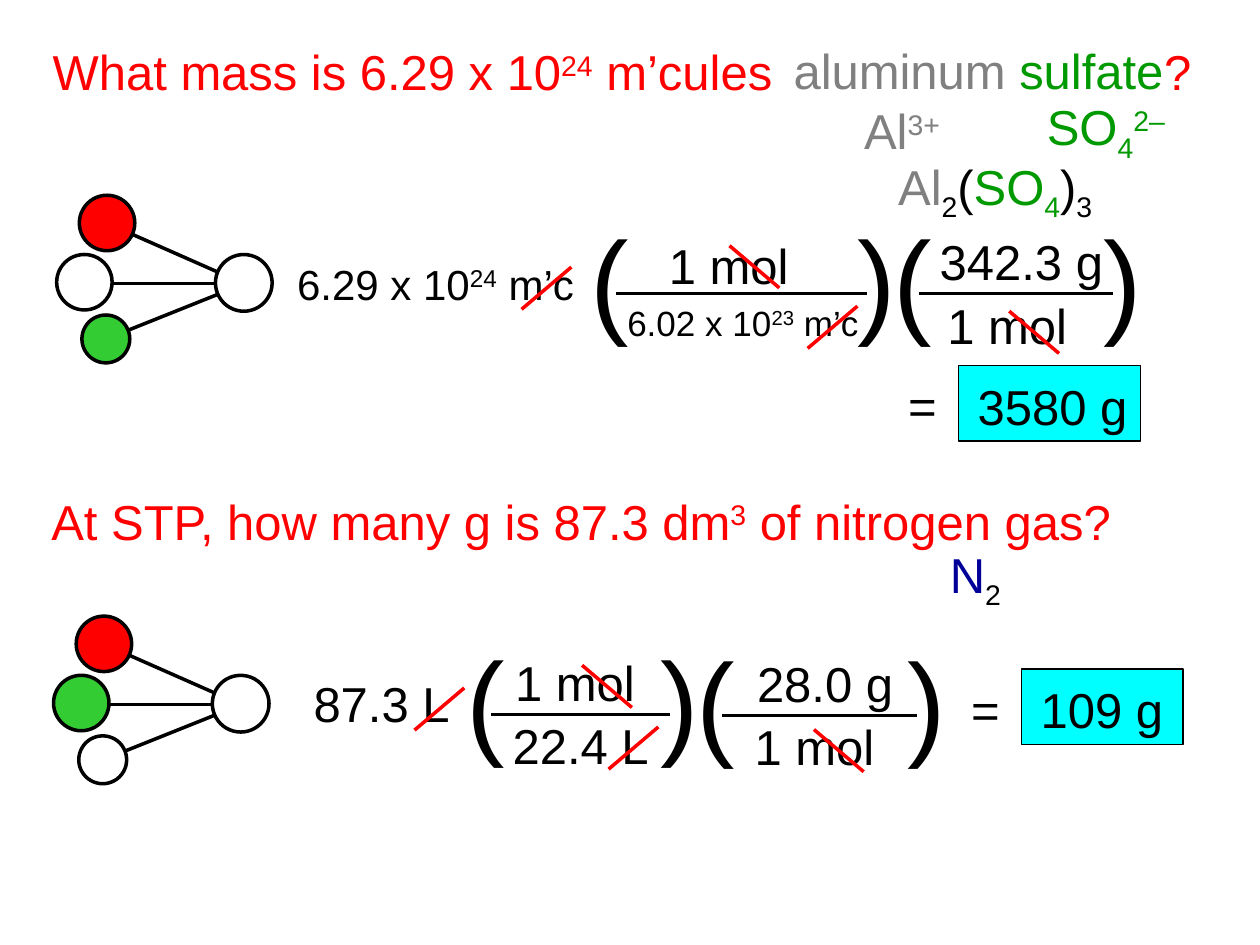
from dataclasses import dataclass

from lxml import etree
from pptx import Presentation
from pptx import util as u
from pptx.dml.color import RGBColor
from pptx.enum import shapes, text
from pptx.oxml import ns


@dataclass(frozen=True)
class Theme:
    font: str = "Arial"
    black: str = "000000"
    red: str = "FF0000"
    green: str = "33CC33"
    aluminum: str = "808080"
    sulfate: str = "009900"
    nitrogen: str = "000099"
    answer: str = "00FFFF"
    body: int = 28
    given: int = 24
    small: int = 20
    bracket: int = 66
    thin: float = 0.75
    bar: float = 1.75
    stroke: float = 2
    superscript: int = 30000
    subscript: int = -25000


THEME = Theme()
COLUMNS, ROWS = 100, 75  # square cells across a 10 x 7.5 inch slide
CELL = u.Inches(10) // COLUMNS
LINE_HEIGHT = 5.7  # rows taken by one line of body text


def cells(count):
    return u.Emu(round(count * CELL))


def rgb(colour):
    return RGBColor.from_string(colour)


# Text: each run is (wording, colour, baseline shift)
def plain(wording, colour=THEME.black):
    return wording, colour, 0


def sup(wording, colour=THEME.black):
    return wording, colour, THEME.superscript


def sub(wording, colour=THEME.black):
    return wording, colour, THEME.subscript


def write_runs(paragraph, runs, size):
    for wording, colour, shift in runs:
        run = paragraph.add_run()
        run.text = wording
        run.font.name = THEME.font
        run.font.size = u.Pt(size)
        run.font.color.rgb = rgb(colour)
        if shift:
            run.font._element.set("baseline", str(shift))


def add_words(slide, col, row, width, runs, size=THEME.body, height=LINE_HEIGHT,
              anchor=text.MSO_ANCHOR.TOP, align=text.PP_ALIGN.LEFT):
    box = slide.shapes.add_textbox(*map(cells, (col, row, width, height)))
    frame = box.text_frame
    frame.word_wrap = True
    frame.auto_size = text.MSO_AUTO_SIZE.SHAPE_TO_FIT_TEXT
    frame.vertical_anchor = anchor
    frame.paragraphs[0].alignment = align
    write_runs(frame.paragraphs[0], runs, size)


def add_formula(slide, col, row, width, *runs):
    add_words(slide, col, row, width, runs, anchor=text.MSO_ANCHOR.MIDDLE)


# Lines and outlined shapes
def add_line(slide, start, end, colour=THEME.black, weight=THEME.stroke):
    line = slide.shapes.add_connector(
        shapes.MSO_CONNECTOR.STRAIGHT, *map(cells, (*start, *end)))
    line.line.color.rgb = rgb(colour)
    line.line.width = u.Pt(weight)
    etree.SubElement(line._element.spPr, ns.qn("a:effectLst"))


def add_outlined(slide, kind, col, row, width, height, fill, weight):
    shape = slide.shapes.add_shape(kind, *map(cells, (col, row, width, height)))
    shape.shadow.inherit = False
    if fill:
        shape.fill.solid()
        shape.fill.fore_color.rgb = rgb(fill)
    else:
        shape.fill.background()
    shape.line.color.rgb = rgb(THEME.black)
    shape.line.width = u.Pt(weight)
    return shape


def add_strike(slide, col, row, rising=False):
    top, bottom = row, row + 3.35
    if rising:
        top, bottom = bottom, top
    add_line(slide, (col, top), (col + 3.95, bottom), THEME.red)


# Three quantities joined to the mole on the right
def add_mole_map(slide, col, row, fills):
    for start, end in (((5.7, 10.7), (12.7, 7.9)),
                       ((6, 3.1), (12.8, 6.1)),
                       ((4.3, 7), (12.6, 7))):
        add_line(slide, (col + start[0], row + start[1]),
                 (col + end[0], row + end[1]))
    nodes = ((1.8, 0, 4.4), (0, 4.7, 4.4), (2, 9.5, 3.8), (12.6, 4.7, 4.5))
    for (dx, dy, size), fill in zip(nodes, (*fills, None)):
        add_outlined(slide, shapes.MSO_SHAPE.OVAL, col + dx, row + dy,
                     size, size, fill, THEME.stroke)


# Bracketed conversion factor with its fraction bar
def add_factor(slide, left, right, row):
    for col, bracket in ((left, "("), (right, ")")):
        add_words(slide, col, row, 4.2, [plain(bracket)], THEME.bracket, 12,
                  align=text.PP_ALIGN.CENTER)
    add_line(slide, (left + 3, row + 7.3), (right + 1.75, row + 7.3),
             weight=THEME.bar)


def add_answer(slide, col, row, width, wording):
    add_words(slide, col - 5, row + 0.35, 4.5, [plain("=")])
    box = add_outlined(slide, shapes.MSO_SHAPE.RECTANGLE, col, row, width, 6,
                       THEME.answer, THEME.thin)
    frame = box.text_frame
    frame.word_wrap = False
    frame.vertical_anchor = text.MSO_ANCHOR.TOP
    frame.margin_left, frame.margin_top = cells(1.5), cells(0.85)
    frame.margin_right = 0
    frame.paragraphs[0].alignment = text.PP_ALIGN.LEFT
    write_runs(frame.paragraphs[0], [plain(wording)], THEME.body)


def add_mass_problem(slide):
    red, grey, green = THEME.red, THEME.aluminum, THEME.sulfate
    # Question and the compound's formula
    add_formula(slide, 3.2, 2.8, 60, plain("What mass is 6.29 x 10", red),
                sup("24", red), plain(" m’cules", red))
    add_formula(slide, 62, 2.7, 32.6, plain("aluminum ", grey),
                plain("sulfate", green))
    add_formula(slide, 91.4, 2.8, 5, plain("?", red))
    add_formula(slide, 67.6, 7.5, 8.5, plain("Al", grey), sup("3+", grey))
    add_formula(slide, 82.1, 7.5, 13.1, plain("SO", green), sub("4", green),
                sup("2–", green))
    add_formula(slide, 70.3, 12.2, 19.2, plain("Al", grey), sub("2"),
                plain("("), plain("SO", green), sub("4", green), plain(")"),
                sub("3"))

    # Molecules to moles to grams
    add_mole_map(slide, 4.5, 15.5, (red, None, THEME.green))
    add_words(slide, 22.6, 20, 25.3,
              [plain("6.29 x 10"), sup("24"), plain(" m’c")], THEME.given, 5)
    add_factor(slide, 45.9, 67.1, 16)
    add_words(slide, 52.1, 18.2, 11.9, [plain("1 mol")])
    add_words(slide, 48.8, 23.4, 21.2,
              [plain("6.02 x 10"), sup("23"), plain(" m’c")], THEME.small, 4.3)
    add_factor(slide, 69.9, 86.6, 16)
    add_words(slide, 73.6, 17.9, 15.9, [plain("342.3 g")])
    add_words(slide, 74.2, 23, 11.9, [plain("1 mol")])
    for col, row, rising in ((41.4, 21.2, True), (57.9, 19.5, False),
                             (64.1, 24.3, True), (80.1, 24.7, False)):
        add_strike(slide, col, row, rising)
    add_answer(slide, 76.1, 29, 14.4, "3580 g")


def add_gas_problem(slide):
    red = THEME.red
    # Question and the gas formula
    add_formula(slide, 3.1, 38.5, 90, plain("At STP, how many g is 87.3 dm", red),
                sup("3", red), plain(" of nitrogen gas?", red))
    add_formula(slide, 74.4, 43, 7.4, plain("N", THEME.nitrogen), sub("2"))

    # Volume to moles to grams
    add_mole_map(slide, 4.25, 48.9, (red, THEME.green, None))
    add_words(slide, 23.9, 53, 13.7, [plain("87.3 L")])
    add_factor(slide, 36, 51.4, 49.4)
    add_words(slide, 39.9, 51.3, 11.9, [plain("1 mol")])
    add_words(slide, 39.7, 56.3, 12.9, [plain("22.4 L")])
    add_factor(slide, 54.3, 71, 49.5)
    add_words(slide, 59.1, 51.4, 13.5, [plain("28.0 g")])
    add_words(slide, 58.9, 56.4, 11.9, [plain("1 mol")])
    for col, row, rising in ((32.9, 54.6, True), (46.2, 52.8, False),
                             (48.3, 57.7, True), (64.6, 57.9, False)):
        add_strike(slide, col, row, rising)
    add_answer(slide, 81.1, 53.1, 12.8, "109 g")


def main():
    deck = Presentation()
    deck.slide_width, deck.slide_height = cells(COLUMNS), cells(ROWS)
    slide = deck.slides.add_slide(deck.slide_layouts[6])
    add_mass_problem(slide)
    add_gas_problem(slide)
    deck.save("out.pptx")


if __name__ == "__main__":
    main()
